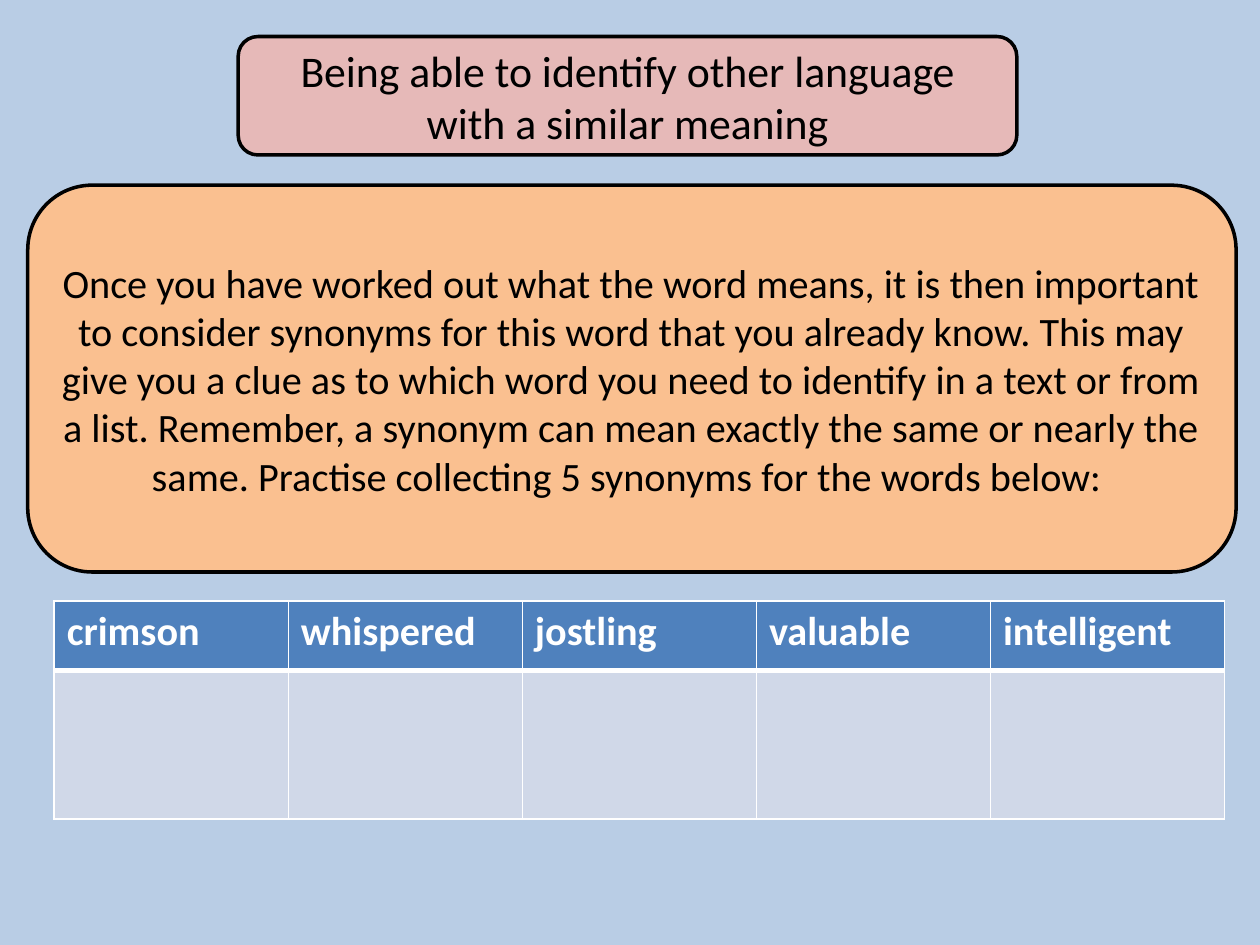
from pptx import Presentation
from pptx import util as u
from pptx.dml.color import RGBColor
from pptx.enum import shapes, text
from pptx.oxml.ns import qn
from lxml import etree

COLORS = {
    "background": "B9CDE5",
    "title": "E6B9B8",
    "body": "FAC090",
    "header": "4F81BD",
    "cell": "D0D8E8",
    "black": "000000",
    "white": "FFFFFF",
}


def rgb(name):
    return RGBColor.from_string(COLORS[name])


class SlideBuilder:
    """Holds the style and the current slide."""

    font = "Calibri"
    text_size = 23

    def __init__(self, prs):
        self.s = prs.slides.add_slide(prs.slide_layouts[6])
        fill = self.s.background.fill
        fill.solid()
        fill.fore_color.rgb = rgb("background")

    def format_text(self, tf, size, color, bold=False):
        for p in tf.paragraphs:
            for r in p.runs:
                r.font.name = self.font
                r.font.size = u.Pt(size)
                r.font.bold = bold
                r.font.color.rgb = rgb(color)

    def box(self, left, top, width, height, fill, words, size):
        sp = self.s.shapes.add_shape(
            shapes.MSO_SHAPE.ROUNDED_RECTANGLE,
            u.Inches(left), u.Inches(top), u.Inches(width), u.Inches(height))
        sp.shadow.inherit = False
        sp.fill.solid()
        sp.fill.fore_color.rgb = rgb(fill)
        sp.line.color.rgb = rgb("black")
        sp.line.width = u.Pt(2)
        tf = sp.text_frame
        tf.word_wrap = True
        tf.vertical_anchor = text.MSO_ANCHOR.MIDDLE
        tf.text = words
        tf.paragraphs[0].alignment = text.PP_ALIGN.CENTER
        self.format_text(tf, size, "black")

    def borders(self, cell, **widths):
        tc_pr = cell._tc.get_or_add_tcPr()
        for side in "LRTB":
            ln = etree.SubElement(tc_pr, qn(f"a:ln{side}"),
                                  w=str(u.Pt(widths.get(side, 1))))
            fill = etree.SubElement(ln, qn("a:solidFill"))
            etree.SubElement(fill, qn("a:srgbClr"), val=COLORS["white"])

    def word_table(self, left, top, width, row_heights, words):
        table = self.s.shapes.add_table(
            len(row_heights), len(words), u.Inches(left), u.Inches(top),
            u.Inches(width), u.Inches(sum(row_heights))).table
        for row, height in zip(table.rows, row_heights):
            row.height = u.Inches(height)
        for i, word in enumerate(words):
            header, blank = table.cell(0, i), table.cell(1, i)
            header.text = word
            self.format_text(header.text_frame, self.text_size, "white", bold=True)
            # A thick rule parts the header from the answer space
            self.borders(header, B=3)
            self.borders(blank, T=3)
            for cell, color in ((header, "header"), (blank, "cell")):
                cell.fill.solid()
                cell.fill.fore_color.rgb = rgb(color)


def main():
    prs = Presentation()
    prs.slide_width, prs.slide_height = u.Inches(10), u.Inches(7.5)
    slide = SlideBuilder(prs)

    # Title
    slide.box(1.89, 0.29, 6.18, 0.94, "title",
              "Being able to identify other language with a similar meaning", 25)

    # Instructions
    slide.box(0.22, 1.47, 9.59, 3.07, "body",
              "Once you have worked out what the word means, it is then important "
              "to consider synonyms for this word that you already know. This may "
              "give you a clue as to which word you need to identify in a text or "
              "from a list. Remember, a synonym can mean exactly the same or nearly "
              "the same. Practise collecting 5 synonyms for the words below: ",
              slide.text_size)

    # Words to find synonyms for
    slide.word_table(0.43, 4.77, 9.29, (0.55, 1.18),
                     ("crimson", "whispered", "jostling", "valuable", "intelligent"))

    prs.save("out.pptx")


if __name__ == "__main__":
    main()
